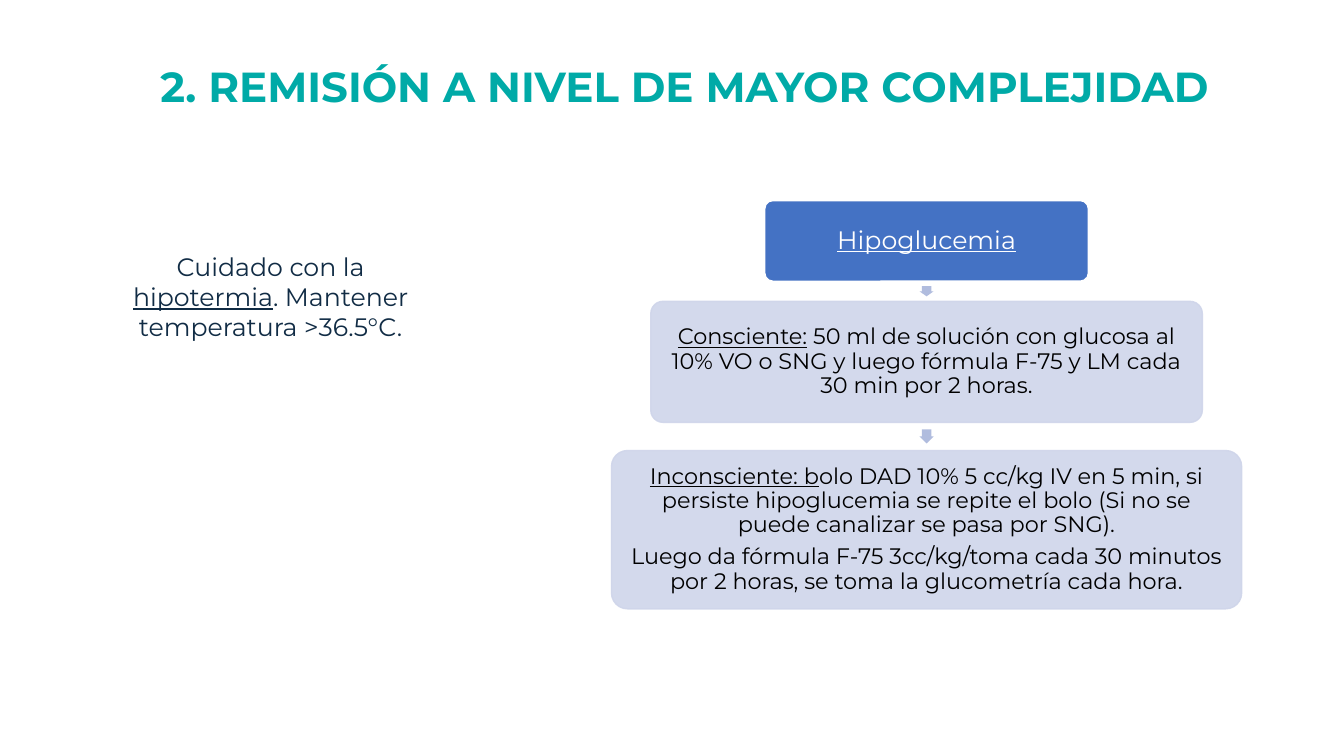
from pptx import Presentation
from pptx.dml.color import RGBColor as RGB
from pptx.enum.shapes import MSO_SHAPE as Shape
from pptx.enum.text import MSO_ANCHOR as Anchor, PP_ALIGN as Align
from pptx.oxml.ns import qn
from pptx.util import Pt
from lxml.etree import SubElement

PX = 9144  # 100 px to the inch
FONT = "Montserrat"
TEAL = RGB(0x00, 0xAA, 0xA7)
NAVY = RGB(0x11, 0x2C, 0x45)
BLUE = RGB(0x44, 0x72, 0xC4)
PALE = RGB(0xCF, 0xD5, 0xEA)
MID = RGB(0xB0, 0xBC, 0xDE)
WHITE = RGB(0xFF, 0xFF, 0xFF)
BLACK = RGB(0, 0, 0)

# Each paragraph is a list of (text, underlined) runs.
TITLE = [[("2. REMISIÓN A NIVEL DE MAYOR COMPLEJIDAD", False)]]
CARE = [[("Cuidado con la ", False), ("hipotermia", True),
         (". Mantener temperatura >36.5°C.", False)]]
TEXTS = [  # box, paragraphs, size, colour, bold
    ((92, 55, 1174, 61), TITLE, 30, TEAL, True),
    ((122, 244, 293, 101), CARE, 18, NAVY, False),
]

AXIS = 919
CARDS = [  # top, width, height, inset, fill, line, alpha, size, colour, paragraphs
    (199, 321, 80, 5, BLUE, WHITE, 100, 18, WHITE, [[("Hipoglucemia", True)]]),
    (299, 547, 120, 5, PALE, PALE, 90, 16, BLACK, [
        [("Consciente:", True),
         (" 50 ml de solución con glucosa al 10% VO o SNG y luego fórmula "
          "F-75 y LM cada 30 min por 2 horas.", False)]]),
    (447, 625, 157, 7, PALE, PALE, 90, 16, BLACK, [
        [("Inconsciente: b", True),
         ("olo DAD 10% 5 cc/kg IV en 5 min, si persiste hipoglucemia se "
          "repite el bolo (Si no se puede canalizar se pasa por SNG).", False)],
        [("Luego da fórmula F-75 3cc/kg/toma cada 30 minutos por 2 horas, "
          "se toma la glucometría cada hora.", False)]]),
]
ARROWS = [10, 14]  # length of the arrow after each card
BREADTH = 14


def emu(*vals):
    return [round(v * PX) for v in vals]


def write(frame, paras, size, color, bold=False):
    frame.word_wrap = True
    for i, runs in enumerate(paras):
        para = frame.paragraphs[0] if i == 0 else frame.add_paragraph()
        para.alignment = Align.CENTER
        for text, under in runs:
            run = para.add_run()
            run.text = text
            font = run.font
            font.name, font.size, font.bold = FONT, Pt(size), bold
            font.underline = under
            font.color.rgb = color


def paint(shape, fill, line=None, alpha=100):
    shape.shadow.inherit = False
    shape.fill.solid()
    shape.fill.fore_color.rgb = fill
    if line is None:
        shape.line.fill.background()
    else:
        shape.line.color.rgb = line
        shape.line.width = Pt(1)
    if alpha < 100:
        for node in shape.element.spPr.iter(qn("a:srgbClr")):
            SubElement(node, qn("a:alpha")).set("val", str(alpha * 1000))


def add_card(shapes, top, wide, high, inset, fill, line, alpha, size, color, paras):
    card = shapes.add_shape(Shape.ROUNDED_RECTANGLE,
                            *emu(AXIS - wide / 2, top, wide, high))
    card.adjustments[0] = 0.1
    paint(card, fill, line, alpha)
    frame = card.text_frame
    frame.vertical_anchor = Anchor.MIDDLE
    frame.margin_left = frame.margin_right = inset * PX
    frame.margin_top = frame.margin_bottom = inset * PX
    write(frame, paras, size, color)
    for para in frame.paragraphs:
        para.line_spacing = 0.9
        para.space_after = Pt(0.35 * size)


def add_arrow(shapes, mid, length):
    arrow = shapes.add_shape(Shape.RIGHT_ARROW, *emu(
        AXIS - length / 2, mid - BREADTH / 2, length, BREADTH))
    arrow.rotation = 90
    arrow.adjustments[0] = 0.67
    paint(arrow, MID)


def main():
    prs = Presentation()
    prs.slide_width, prs.slide_height = emu(1333, 750)
    shapes = prs.slides.add_slide(prs.slide_layouts[6]).shapes
    for box, *style in TEXTS:
        write(shapes.add_textbox(*emu(*box)).text_frame, *style)
    for card in CARDS:
        add_card(shapes, *card)
    for upper, lower, length in zip(CARDS, CARDS[1:], ARROWS):
        add_arrow(shapes, (upper[0] + upper[2] + lower[0]) / 2, length)
    prs.save("out.pptx")


if __name__ == "__main__":
    main()
